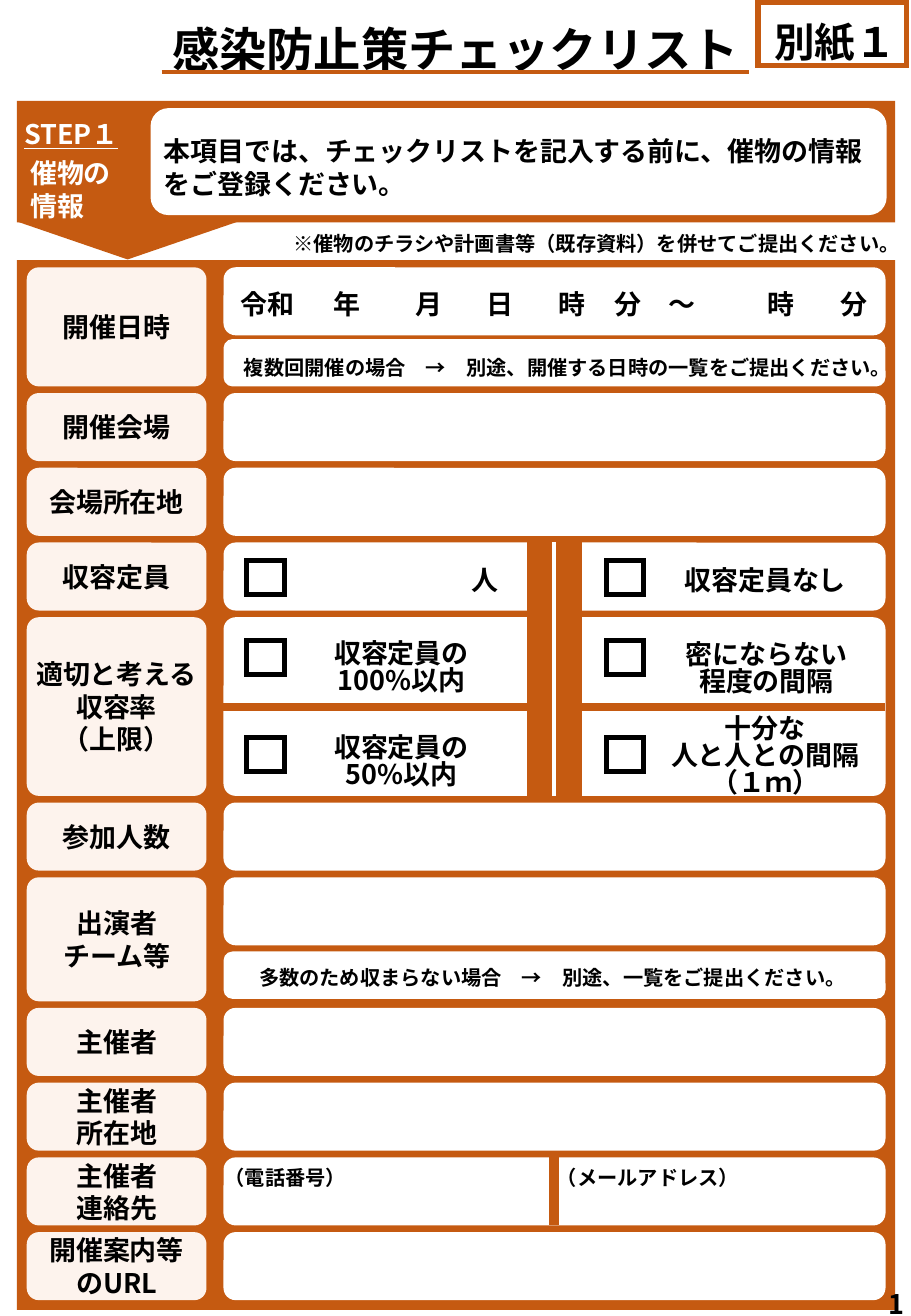
from dataclasses import dataclass

from lxml import etree
from pptx import Presentation
from pptx.dml.color import RGBColor
from pptx.enum.lang import MSO_LANGUAGE_ID
from pptx.enum.shapes import MSO_CONNECTOR, MSO_SHAPE
from pptx.enum.text import MSO_ANCHOR, MSO_AUTO_SIZE, PP_ALIGN
from pptx.oxml.ns import qn
from pptx.util import Inches, Pt

RECT = MSO_SHAPE.RECTANGLE
ROUND = MSO_SHAPE.ROUNDED_RECTANGLE
PENTAGON = MSO_SHAPE.PENTAGON
STRAIGHT = MSO_CONNECTOR.STRAIGHT
LEFT, CENTER, RIGHT = PP_ALIGN.LEFT, PP_ALIGN.CENTER, PP_ALIGN.RIGHT
TOP, MIDDLE = MSO_ANCHOR.TOP, MSO_ANCHOR.MIDDLE
NO_FIT = MSO_AUTO_SIZE.NONE
JAPANESE = MSO_LANGUAGE_ID.JAPANESE


@dataclass(frozen=True)
class Theme:
    font: str = "Noto Sans CJK JP"
    accent: str = "C55A11"
    label: str = "FDF3ED"
    white: str = "FFFFFF"
    ink: str = "000000"
    title: int = 28
    badge: int = 24
    body: int = 16
    small: int = 12


T = Theme()

TITLE = "感染防止策チェックリスト"
BADGE = "別紙１"
STEP = "STEP１"
STEP_NAME = ["催物の", "情報"]
INTRO = "本項目では、チェックリストを記入する前に、催物の情報をご登録ください。"
SUBMIT_NOTE = "※催物のチラシや計画書等（既存資料）を併せてご提出ください。"
PAGE = "1"

SINGLE = [(0, 0.56)]
ROWS = [
    (["開催日時"], 0.98, [(0, 0.56), (0.59, 0.39)]),
    (["開催会場"], 0.56, SINGLE),
    (["会場所在地"], 0.56, SINGLE),
    (["収容定員"], 0.56, SINGLE),
    (["適切と考える", "収容率", "（上限）"], 1.47, [(0, 1.47)]),
    (["参加人数"], 0.56, SINGLE),
    (["出演者", "チーム等"], 1.02, [(0, 0.56), (0.61, 0.39)]),
    (["主催者"], 0.56, SINGLE),
    (["主催者", "所在地"], 0.56, SINGLE),
    (["主催者", "連絡先"], 0.56, SINGLE),
    (["開催案内等のURL"], 0.56, SINGLE),
]
DATE_PARTS = [("令和", 2.2), ("年", 2.86), ("月", 3.53), ("日", 4.12), ("時", 4.71),
              ("分　～", 5.39), ("時", 6.43), ("分", 7.03)]
CHOICES = [
    (["人"], 3.55, 4.63, 0.89),
    (["収容定員なし"], 5.49, 4.63, 1.62),
    (["収容定員の", "100%以内"], 2.24, 5.23, 2.13),
    (["密にならない程度の間隔"], 5.5, 5.24, 1.62),
    (["収容定員の", "50%以内"], 2.24, 6.01, 2.13),
    (["十分な", "人と人との間隔", "（１ｍ）"], 5.3, 5.85, 2),
]
FIELD_NOTES = [
    ("複数回開催の場合　→　別途、開催する日時の一覧をご提出ください。", 1.98, 2.85, 5.39),
    ("多数のため収まらない場合　→　別途、一覧をご提出ください。", 1.98, 7.87, 5.14),
    ("（電話番号）", 1.68, 9.52, 1.34),
    ("（メールアドレス）", 4.48, 9.52, 1.71),
]
CHECK_X, CHECK_Y = (2.03, 4.99), (4.61, 5.27, 6.07)
FORM_TOP, FORM_BOTTOM = 2.2, 10.7
LABEL_X, LABEL_W, FIELD_X, FIELD_W = 0.22, 1.48, 1.84, 5.45
SPLIT_X = 4.56

prs = Presentation()
prs.slide_width, prs.slide_height = Inches(7.5), Inches(10.83)
s = prs.slides.add_slide(prs.slide_layouts[5])


def rgb(value):
    return RGBColor.from_string(value)


def write(sp, lines, size=T.body, color=T.ink, align=CENTER, anchor=TOP, spacing=None,
          underline=False, wrap=True, margins=(0.1, 0.05, 0.1, 0.05)):
    tf = sp.text_frame
    tf.auto_size, tf.word_wrap, tf.vertical_anchor = NO_FIT, wrap, anchor
    (tf.margin_left, tf.margin_top, tf.margin_right,
     tf.margin_bottom) = [Inches(m) for m in margins]
    for i, line in enumerate(lines):
        p = tf.add_paragraph() if i else tf.paragraphs[0]
        p.alignment = align
        p.line_spacing = Pt(spacing or round(size * 1.2, 1))
        r = p.add_run()
        r.text = line
        f = r.font
        f.size, f.bold, f.underline, f.name = Pt(size), True, underline, T.font
        f.language_id = JAPANESE
        f.color.rgb = rgb(color)
        ea = etree.SubElement(r._r.get_or_add_rPr(), qn("a:ea"))
        ea.set("typeface", T.font)


def text(lines, x, y, w, h=0.3, **fmt):
    sp = s.shapes.add_textbox(Inches(x), Inches(y), Inches(w), Inches(h))
    write(sp, lines, **fmt)


def shape(kind, x, y, w, h, fill=None, line=None, weight=3, adj=None):
    sp = s.shapes.add_shape(kind, Inches(x), Inches(y), Inches(w), Inches(h))
    sp.shadow.inherit = False
    if fill:
        sp.fill.solid()
        sp.fill.fore_color.rgb = rgb(fill)
    else:
        sp.fill.background()
    if line:
        sp.line.color.rgb = rgb(line)
        sp.line.width = Pt(weight)
        miter = etree.SubElement(sp._element.spPr.find(qn("a:ln")), qn("a:miter"))
        miter.set("lim", "800000")
    else:
        sp.line.fill.background()
    if adj is not None:
        sp.adjustments[0] = adj
    return sp


def rule(x1, y1, x2, y2, color, weight):
    c = s.shapes.add_connector(STRAIGHT, Inches(x1), Inches(y1), Inches(x2), Inches(y2))
    c.line.color.rgb = rgb(color)
    c.line.width = Pt(weight)
    etree.SubElement(c._element.spPr, qn("a:effectLst"))


def panel(x, y, w, h, fill):
    return shape(ROUND, x, y, w, h, fill, adj=min(0.1 / h, 0.19))


def header():
    title = s.shapes.title
    title.left, title.top, title.width, title.height = [
        Inches(v) for v in (0.48, 0.12, 6.54, 0.57)]
    write(title, [TITLE], size=T.title)
    rule(1.33, 0.59, 6.17, 0.59, T.accent, 2.25)
    badge = shape(RECT, 6.24, 0.02, 1.22, 0.52, line=T.accent)
    write(badge, [BADGE], size=T.badge, margins=(0.05, 0.12, 0, 0), wrap=False)

    shape(PENTAGON, 0.74, 0.92, 0.62, 1.81, T.accent).rotation = 90
    shape(RECT, 0.14, 0.83, 7.23, 1, T.accent)
    shape(ROUND, 1.24, 0.89, 6.06, 0.88, T.white)
    text([STEP], 0.1, 0.92, 1.19, color=T.white, align=LEFT, underline=True)
    text(STEP_NAME, 0.15, 1.24, 1.1, 0.6, color=T.white, align=LEFT)
    text([INTRO], 1.25, 1.06, 6.14, 0.64, align=LEFT)
    text([SUBMIT_NOTE], 2.12, 1.83, 5.39, size=T.small, align=RIGHT, spacing=16)


def form():
    shape(RECT, 0.14, 2.14, 7.23, 8.64, T.accent)
    gap = (FORM_BOTTOM - FORM_TOP - sum(h for _, h, _ in ROWS)) / (len(ROWS) - 1)
    y = FORM_TOP
    for label, height, fields in ROWS:
        sp = panel(LABEL_X, y, LABEL_W, height, T.label)
        write(sp, label, anchor=MIDDLE, wrap=len(label) == 1,
              margins=(0.07, 0.04, 0.07, 0.04))
        for offset, h in fields:
            panel(FIELD_X, y + offset, FIELD_W, h, T.white)
        y += height + gap


def entries():
    rule(FIELD_X + FIELD_W, 5.82, FIELD_X, 5.82, T.accent, 4.5)
    shape(RECT, 4.34, 4.46, 0.45, 2.09, T.accent)
    rule(SPLIT_X, 4.46, SPLIT_X, 6.55, T.white, 2.25)
    rule(SPLIT_X, 9.52, SPLIT_X, 10.08, T.accent, 6)
    for part, center in DATE_PARTS:
        text([part], center - 0.45, 2.36, 0.9, spacing=16, wrap=False)
    for lines, x, y, w in CHOICES:
        text(lines, x, y, w, 0.1 + 0.22 * len(lines), spacing=16)
    for note, x, y, w in FIELD_NOTES:
        text([note], x, y, w, size=T.small, spacing=16, wrap=False)
    for y in CHECK_Y:
        for x in CHECK_X:
            shape(RECT, x, y, 0.31, 0.28, line=T.ink)


header()
form()
entries()
text([PAGE], 7.22, 10.55, 0.28, 0.27, align=LEFT, wrap=False)
prs.save("out.pptx")
